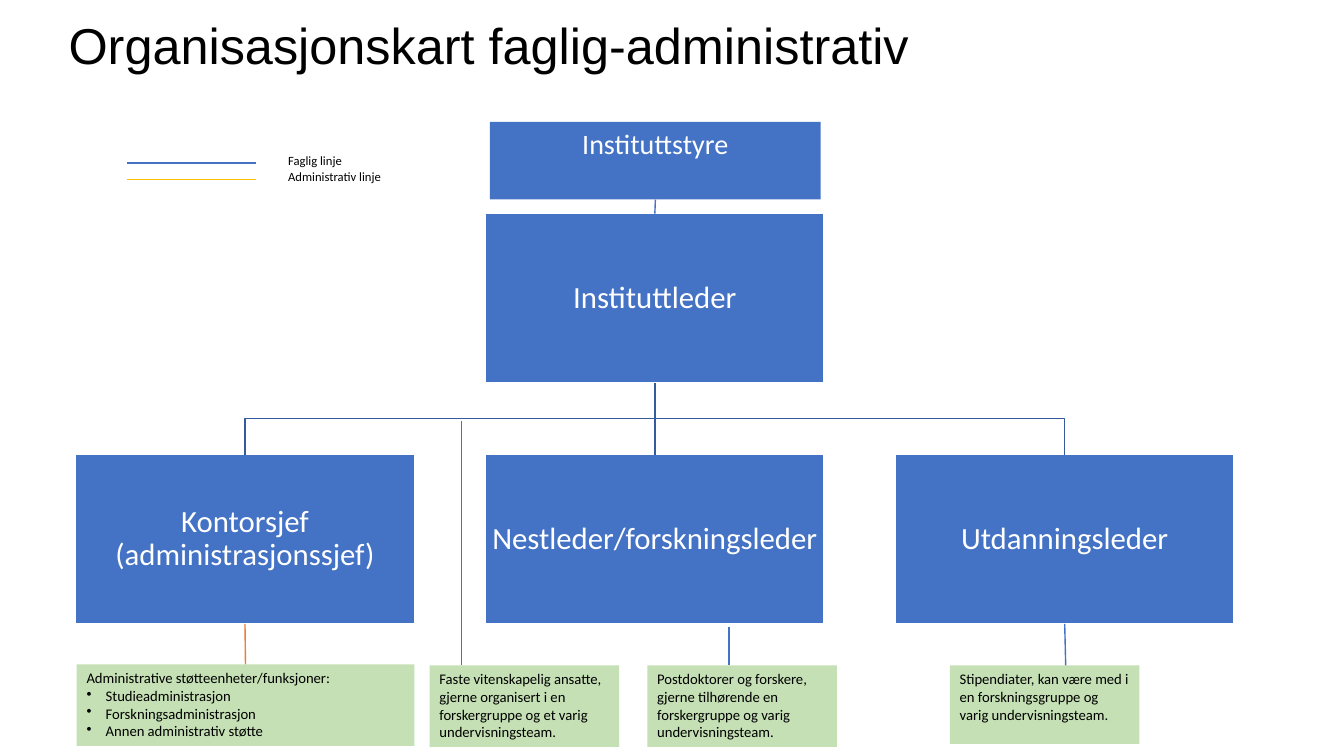
import pptx
import pptx.dml.color
import pptx.enum.shapes
import pptx.enum.text
import pptx.oxml.ns
import pptx.util
from lxml import etree

UNIT = 0.1  # inches in one column or row of the fine grid
TOP, BOTTOM = 0, 2  # connection sites of a rectangle
BLUE, DARK_BLUE, GREEN = "4472C4", "365B9D", "C5E0B4"
ORANGE, YELLOW, WHITE, BLACK = "ED7D31", "FFC000", "FFFFFF", "000000"
ALIGN = pptx.enum.text.PP_ALIGN
ANCHOR = pptx.enum.text.MSO_ANCHOR


def grid(count):
    return pptx.util.Inches(count * UNIT)


def color(hex_string):
    return pptx.dml.color.RGBColor.from_string(hex_string)


def add_bullet(paragraph, indent=0.19):
    properties = paragraph._p.get_or_add_pPr()
    properties.set("marL", str(pptx.util.Inches(indent)))
    properties.set("indent", str(-pptx.util.Inches(indent)))
    bullet = etree.SubElement(properties, pptx.oxml.ns.qn("a:buChar"))
    bullet.set("char", "•")


def write(frame, text, size=10.5, font="Calibri", ink=BLACK, align=ALIGN.LEFT,
          anchor=ANCHOR.TOP, inset=None, spacing=None, wrap=True, bullets=()):
    """Fill a text frame with one paragraph and an optional bullet list."""
    frame.word_wrap = wrap
    frame.vertical_anchor = anchor
    if inset is not None:
        frame.margin_left = frame.margin_right = pptx.util.Inches(inset)
        frame.margin_top = frame.margin_bottom = pptx.util.Inches(inset)
    for index, line in enumerate([text, *bullets]):
        paragraph = frame.add_paragraph() if index else frame.paragraphs[0]
        paragraph.alignment = align
        paragraph.line_spacing = spacing
        if index:
            add_bullet(paragraph)
        run = paragraph.add_run()
        run.text = line
        run.font.size = pptx.util.Pt(size)
        run.font.name = font
        run.font.color.rgb = color(ink)


class Chart:
    """Holds the slide and draws its elements in grid units."""

    def __init__(self, presentation):
        self.slide = presentation.slides.add_slide(presentation.slide_layouts[5])
        self.shapes = self.slide.shapes

    def title(self, text, left, top, width, height):
        title = self.shapes.title
        title.left, title.top = grid(left), grid(top)
        title.width, title.height = grid(width), grid(height)
        write(title.text_frame, text, size=36, font="Arial",
              anchor=ANCHOR.MIDDLE, spacing=0.9)

    def box(self, text, left, top, width, height, fill=BLUE, outline=None, **style):
        shape = self.shapes.add_shape(
            pptx.enum.shapes.MSO_SHAPE.RECTANGLE,
            grid(left), grid(top), grid(width), grid(height))
        shape.shadow.inherit = False
        shape.fill.solid()
        shape.fill.fore_color.rgb = color(fill)
        if outline:
            shape.line.color.rgb = color(outline)
            shape.line.width = pptx.util.Pt(1)
        else:
            shape.line.fill.background()
        write(shape.text_frame, text, **style)
        return shape

    def role(self, text, left, top):
        return self.box(text, left, top, ROLE_WIDTH, ROLE_HEIGHT, outline=WHITE,
                        size=22, ink=WHITE, align=ALIGN.CENTER,
                        anchor=ANCHOR.MIDDLE, inset=0.02, spacing=0.9)

    def label(self, text, left, top, width, height):
        shape = self.shapes.add_textbox(grid(left), grid(top), grid(width), grid(height))
        write(shape.text_frame, text, size=9, wrap=False)

    def line(self, start=(0, 0), end=(0, 0), ink=BLUE, width=1, above=None, below=None):
        connector = self.shapes.add_connector(
            pptx.enum.shapes.MSO_CONNECTOR.STRAIGHT,
            grid(start[0]), grid(start[1]), grid(end[0]), grid(end[1]))
        if above is not None:
            connector.begin_connect(above, BOTTOM)
        if below is not None:
            connector.end_connect(below, TOP)
        connector.line.color.rgb = color(ink)
        connector.line.width = pptx.util.Pt(width)
        etree.SubElement(connector._element.spPr, pptx.oxml.ns.qn("a:effectLst"))

    def elbow(self, above, below):
        start_x = above.left + above.width // 2
        end_x = below.left + below.width // 2
        start_y = above.top + above.height
        middle_y = (start_y + below.top) // 2
        builder = self.shapes.build_freeform(start_x, start_y)
        builder.add_line_segments(
            [(start_x, middle_y), (end_x, middle_y), (end_x, below.top)], close=False)
        shape = builder.convert_to_shape()
        shape.shadow.inherit = False
        shape.fill.background()
        shape.line.color.rgb = color(DARK_BLUE)
        shape.line.width = pptx.util.Pt(1)


ROLE_WIDTH, ROLE_HEIGHT = 33.6, 16.8
ROLE_LEFT, ROLE_PITCH = 7.5, 40.65
LEADER_TOP, DEPUTY_TOP = 21.2, 45.1
DEPUTIES = ["Kontorsjef (administrasjonssjef)", "Nestleder/forskningsleder",
            "Utdanningsleder"]
GROUPS = [
    ("Faste vitenskapelig ansatte, gjerne organisert i en forskergruppe og et "
     "varig undervisningsteam.", 42.6, 8.1),
    ("Postdoktorer og forskere, gjerne tilhørende en forskergruppe og varig "
     "undervisningsteam.", 64.2, 8.1),
    ("Stipendiater, kan være med i en forskningsgruppe og varig "
     "undervisningsteam.", 94.2, 7.8),
]
LEGEND = [("Faglig linje", 16.2, BLUE, 1.25, 8.7),
          ("Administrativ linje", 17.8, YELLOW, 1, 11.7)]


def main():
    presentation = pptx.Presentation()
    presentation.slide_width = pptx.util.Inches(13.33)
    presentation.slide_height = pptx.util.Inches(7.5)
    chart = Chart(presentation)
    chart.title("Organisasjonskart faglig-administrativ", 5.8, -0.1, 115, 9.8)

    # Board, leader and the three deputies
    board = chart.box("Instituttstyre", 48.6, 12.1, 32.8, 7.7,
                      size=20, ink=WHITE, align=ALIGN.CENTER)
    leader = chart.role("Instituttleder", ROLE_LEFT + ROLE_PITCH, LEADER_TOP)
    office, deputy, education = [
        chart.role(name, ROLE_LEFT + index * ROLE_PITCH, DEPUTY_TOP)
        for index, name in enumerate(DEPUTIES)]
    chart.line(above=board, below=leader)
    chart.line(above=leader, below=deputy, ink=DARK_BLUE)
    for side in (office, education):
        chart.elbow(leader, side)

    # Staff groups
    support = chart.box(
        "Administrative støtteenheter/funksjoner:", 7.6, 65.9, 33.5, 8.1, fill=GREEN,
        bullets=["Studieadministrasjon", "Forskningsadministrasjon",
                 "Annen administrativ støtte"])
    for text, left, height in GROUPS:
        chart.box(text, left, 66, 18.8, height, fill=GREEN)
    chart.line(above=office, below=support, ink=ORANGE)
    chart.line((45.8, 41.8), (45.8, 66))
    chart.line((72.3, 62.2), (72.3, 66))
    chart.line(end=(105.7, 66), above=education)

    # Legend
    for text, height, ink, width, label_width in LEGEND:
        chart.line((12.6, height), (25.4, height), ink, width)
        chart.label(text, 27.6, height - 1.5, label_width, 2.5)

    presentation.save("out.pptx")


if __name__ == "__main__":
    main()
